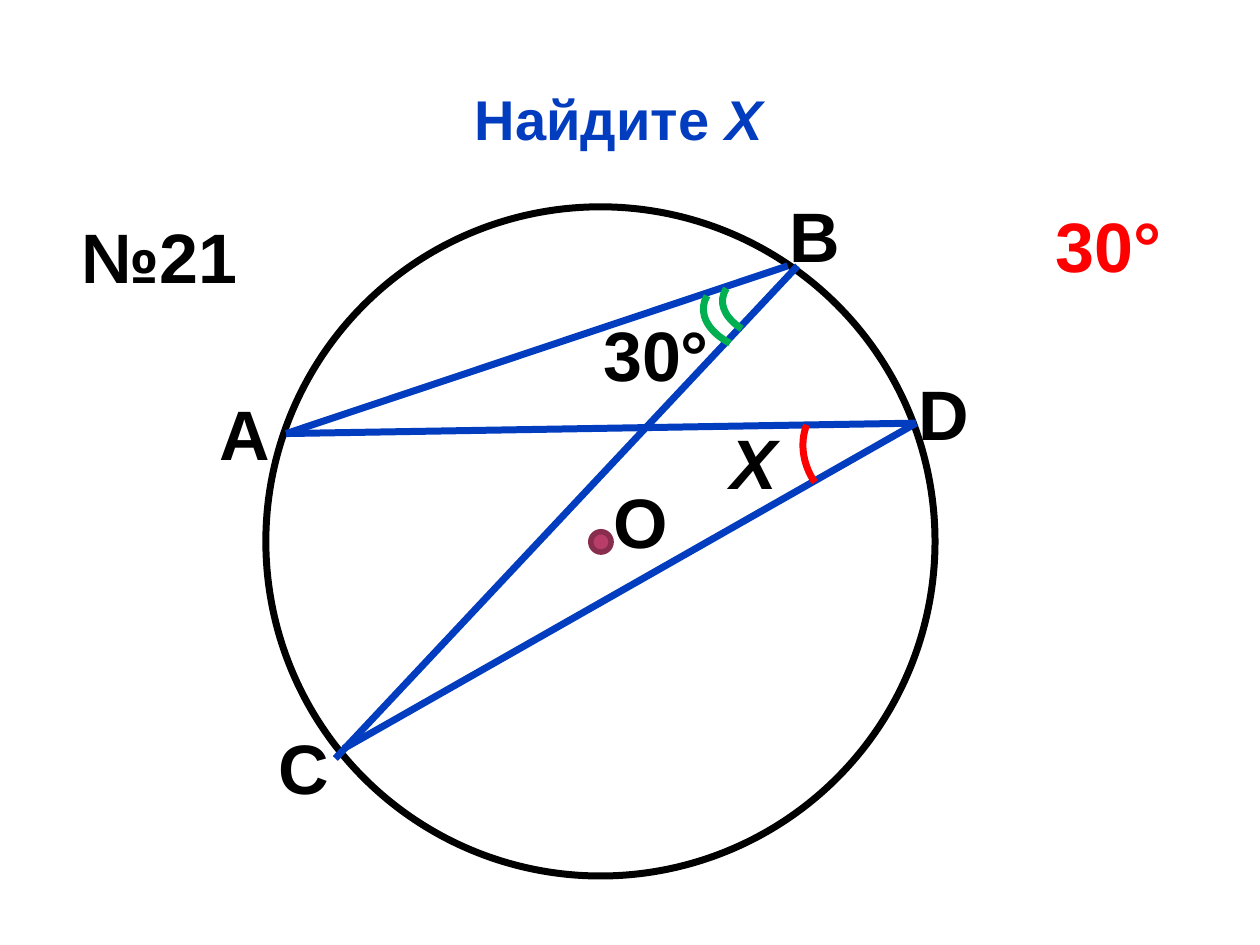
"""Build a geometry slide about inscribed angles on a shared arc."""
from dataclasses import dataclass

import pptx
import pptx.dml.color
import pptx.enum.shapes
import pptx.enum.text
import pptx.util
from lxml import etree
from pptx.dml.color import RGBColor
from pptx.util import Cm, Pt

BLACK = RGBColor(0x00, 0x00, 0x00)
WHITE = RGBColor(0xFF, 0xFF, 0xFF)
BLUE = RGBColor(0x03, 0x3D, 0xBF)
GREEN = RGBColor(0x00, 0xB0, 0x50)
RED = RGBColor(0xFF, 0x00, 0x00)
CRIMSON = RGBColor(0xB8, 0x3D, 0x68)
MAROON = RGBColor(0x88, 0x2D, 0x4D)

STROKE = 4
LABEL_HEIGHT = 1.96
DRAWINGML = "http://schemas.openxmlformats.org/drawingml/2006/main"
SHAPES = pptx.enum.shapes.MSO_SHAPE


@dataclass
class Label:
    text: str
    left: float
    top: float
    width: float
    color: RGBColor = BLACK
    italic: bool = False


@dataclass
class Chord:
    start: tuple[float, float]
    end: tuple[float, float]


@dataclass
class Disc:
    left: float
    top: float
    size: float
    fill: RGBColor
    outline: RGBColor
    stroke: float


@dataclass
class AngleMark:
    left: float
    top: float
    width: float
    height: float
    rotation: float
    sweep: tuple[float, float]
    color: RGBColor


CIRCLE = Disc(5.36, 4.17, 13.49, WHITE, BLACK, STROKE)
CENTER = Disc(11.91, 10.72, 0.41, CRIMSON, MAROON, 3.15)

POINT_A = (5.77, 8.74)
POINT_D = (18.47, 8.53)
CHORDS = [
    Chord((6.76, 15.29), (16.08, 5.36)),
    Chord(POINT_A, (15.88, 5.36)),
    Chord(POINT_A, POINT_D),
    Chord((6.93, 15.09), POINT_D),
]

ANGLE_MARKS = [
    AngleMark(15.11, 4.88, 1.47, 2.57, 276.5, (141.67, 167.9), GREEN),
    AngleMark(14.66, 5.03, 1.6, 2.57, 276.5, (134.67, 167.9), GREEN),
    AngleMark(16.28, 7.77, 2.39, 2.69, 128.3, (12.97, 45.66), RED),
]

LABELS = [
    Label("О", 12.12, 9.53, 1.19),
    Label("30°", 11.91, 6.15, 3.38),
    Label("Х", 14.48, 8.33, 1.98, italic=True),
    Label("№21", 1.4, 4.17, 3.76),
    Label("30°", 21.03, 3.96, 3.38, RED),
    Label("А", 4.17, 7.75, 2.59),
    Label("В", 15.67, 3.76, 2.39),
    Label("С", 5.36, 14.48, 2.77),
    Label("D", 18.26, 7.34, 2.59),
]


def apply_format(target: object, values: dict) -> None:
    """Set every named attribute on the target."""
    for name, value in values.items():
        setattr(target, name, value)


def add_span(para, text: str, size: int, color: RGBColor, italic: bool = False) -> None:
    """Append a bold run to the paragraph."""
    span = para.add_run()
    span.text = text
    apply_format(
        span.font,
        {"name": "Arial", "size": Pt(size), "bold": True, "italic": italic},
    )
    span.font.color.rgb = color


def style_line(shape, color: RGBColor, width: float) -> None:
    """Give the shape a solid line."""
    shape.line.color.rgb = color
    shape.line.width = Pt(width)


def write_title(page) -> None:
    """Place and fill the title placeholder."""
    title = page.shapes.title
    apply_format(
        title,
        {"left": Cm(1.19), "top": Cm(1.12), "width": Cm(22.56), "height": Cm(2.06)},
    )
    apply_format(
        title.text_frame,
        {
            "vertical_anchor": pptx.enum.text.MSO_ANCHOR.BOTTOM,
            "auto_size": pptx.enum.text.MSO_AUTO_SIZE.NONE,
        },
    )
    para = title.text_frame.paragraphs[0]
    para.alignment = pptx.enum.text.PP_ALIGN.CENTER
    add_span(para, "Найдите ", 32, BLUE)
    add_span(para, "Х", 32, BLUE, italic=True)


def draw_disc(page, disc: Disc) -> None:
    """Draw a filled circle."""
    shape = page.shapes.add_shape(
        SHAPES.OVAL, Cm(disc.left), Cm(disc.top), Cm(disc.size), Cm(disc.size)
    )
    shape.shadow.inherit = False
    shape.fill.solid()
    shape.fill.fore_color.rgb = disc.fill
    style_line(shape, disc.outline, disc.stroke)


def draw_chord(page, chord: Chord) -> None:
    """Draw a straight chord."""
    line = page.shapes.add_connector(
        pptx.enum.shapes.MSO_CONNECTOR.STRAIGHT,
        *(Cm(value) for value in chord.start + chord.end),
    )
    style_line(line, BLUE, STROKE)
    etree.SubElement(line._element.spPr, f"{{{DRAWINGML}}}effectLst")


def draw_angle_mark(page, mark: AngleMark) -> None:
    """Draw an arc that marks an angle."""
    arc = page.shapes.add_shape(
        SHAPES.ARC, Cm(mark.left), Cm(mark.top), Cm(mark.width), Cm(mark.height)
    )
    arc.shadow.inherit = False
    arc.rotation = mark.rotation
    for index, value in enumerate(mark.sweep):
        arc.adjustments[index] = value
    arc.fill.background()
    style_line(arc, mark.color, STROKE)


def draw_label(page, label: Label) -> None:
    """Write a label in its own text box."""
    box = page.shapes.add_textbox(
        Cm(label.left), Cm(label.top), Cm(label.width), Cm(LABEL_HEIGHT)
    )
    apply_format(
        box.text_frame,
        {
            "word_wrap": True,
            "auto_size": pptx.enum.text.MSO_AUTO_SIZE.SHAPE_TO_FIT_TEXT,
        },
    )
    add_span(box.text_frame.paragraphs[0], label.text, 40, label.color, label.italic)


def main() -> None:
    """Build and save the deck."""
    deck = pptx.Presentation()
    apply_format(deck, {"slide_width": Cm(25.4), "slide_height": Cm(19.05)})
    page = deck.slides.add_slide(deck.slide_layouts.get_by_name("Title Only"))
    write_title(page)
    draw_disc(page, CIRCLE)
    for chord in CHORDS:
        draw_chord(page, chord)
    draw_disc(page, CENTER)
    for mark in ANGLE_MARKS:
        draw_angle_mark(page, mark)
    for label in LABELS:
        draw_label(page, label)
    deck.save("out.pptx")


if __name__ == "__main__":
    main()
